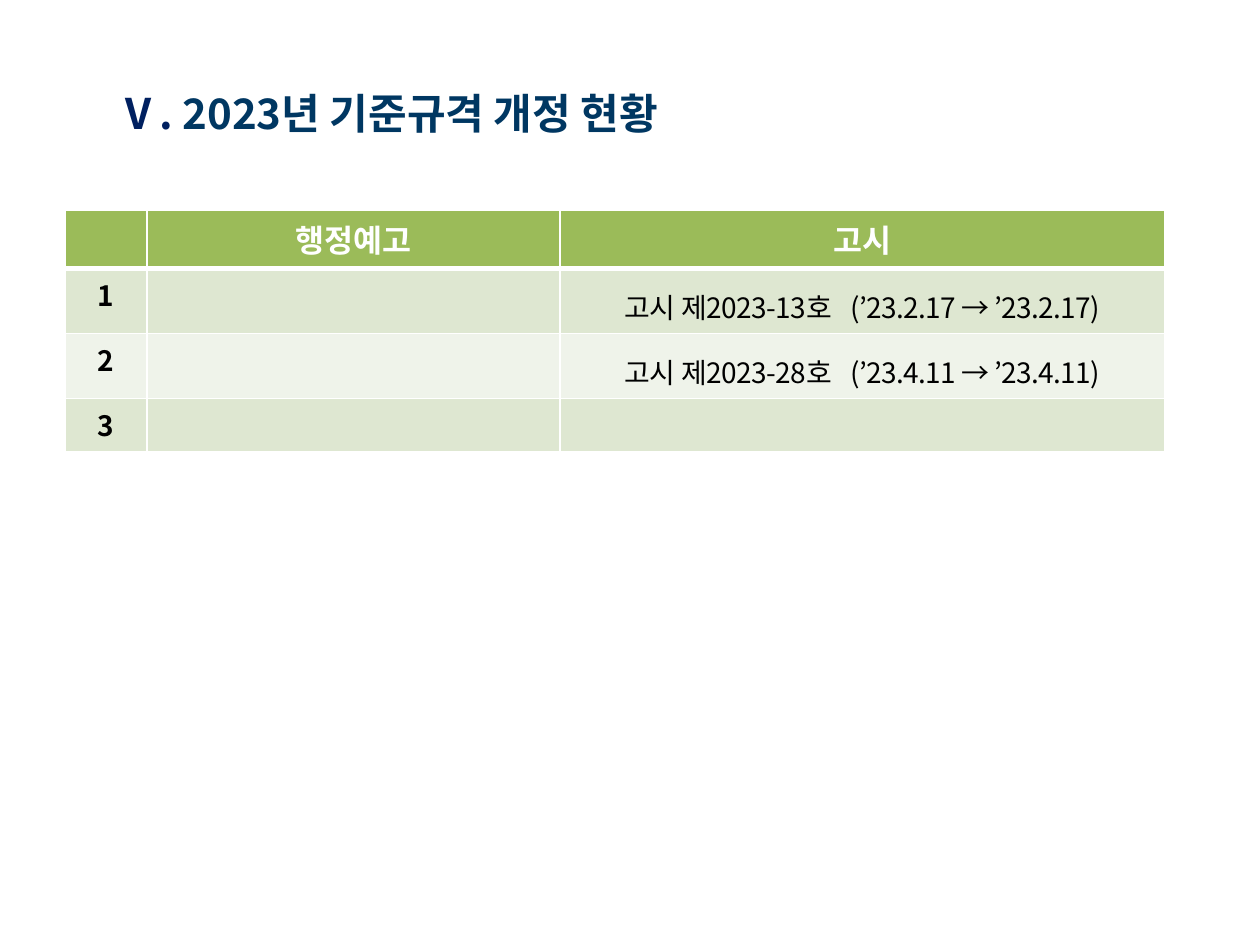
from lxml import etree
from pptx import Presentation
from pptx.dml.color import RGBColor
from pptx.enum.text import MSO_AUTO_SIZE, PP_ALIGN
from pptx.oxml.ns import qn
from pptx.util import Pt

PX = 914400 // 126
FONT = "Noto Sans CJK KR"
CENTER = PP_ALIGN.CENTER
FIT_SHAPE = MSO_AUTO_SIZE.SHAPE_TO_FIT_TEXT


def add_run(paragraph, text, size, color, bold=True, spacing=0):
    """Add a run; spacing is in hundredths of a point."""
    run = paragraph.add_run()
    run.text = text
    run.font.size = Pt(size)
    run.font.bold = bold
    run.font.name = FONT
    run.font.color.rgb = RGBColor.from_string(color)
    properties = run.font._element
    etree.SubElement(properties, qn("a:ea"), typeface=FONT)
    if spacing:
        properties.set("spc", str(spacing))


def add_border(cell, side, points, color):
    line = etree.SubElement(cell._tc.get_or_add_tcPr(), qn("a:ln" + side), w=str(Pt(points)))
    fill = etree.SubElement(line, qn("a:solidFill"))
    etree.SubElement(fill, qn("a:srgbClr"), val=color)


prs = Presentation()
prs.slide_width, prs.slide_height = 1260 * PX, 945 * PX
slide = prs.slides.add_slide(prs.slide_layouts[6])

# Revision table
column_widths = [82, 413, 605]
row_heights = [58, 53, 53, 53]
row_fills = ["9BBB59", "DEE7D1", "EFF3EA", "DEE7D1"]
revisions = slide.shapes.add_table(
    4, 3, 65 * PX, 210 * PX, sum(column_widths) * PX, sum(row_heights) * PX).table
for column, width in zip(revisions.columns, column_widths):
    column.width = width * PX
for r, (row, height, fill) in enumerate(zip(revisions.rows, row_heights, row_fills)):
    row.height = height * PX
    for cell in row.cells:
        for side in "LRTB":
            under_header = (r, side) in [(0, "B"), (1, "T")]
            add_border(cell, side, 3 if under_header else 1, "FFFFFF")
        cell.fill.solid()
        cell.fill.fore_color.rgb = RGBColor.from_string(fill)
        cell.text_frame.paragraphs[0].alignment = CENTER

for c, heading in enumerate(["행정예고", "고시"], start=1):
    add_run(revisions.cell(0, c).text_frame.paragraphs[0], heading, 18, "FFFFFF")
for number in range(1, 4):
    add_run(revisions.cell(number, 0).text_frame.paragraphs[0], str(number), 16, "000000")

notices = [("2023-13", "(’23.2.17 → ’23.2.17)"), ("2023-28", "(’23.4.11 → ’23.4.11)")]
for r, (notice_number, dates) in enumerate(notices, start=1):
    notice = revisions.cell(r, 2).text_frame.paragraphs[0]
    notice.line_spacing = 1.3
    indent = 21 * PX
    notice._p.get_or_add_pPr().set("marL", str(indent))
    notice._p.get_or_add_pPr().set("indent", str(-indent))
    # The widely spaced blank sets the dates apart from the notice number
    for text, spacing in [("고시 제", -20), (notice_number, -30), ("호", -20),
                          (" ", 700), (dates, -30)]:
        add_run(notice, text, 16, "000000", bold=False, spacing=spacing)

# Title
title_frame = slide.shapes.add_textbox(105 * PX, 81 * PX, 645 * PX, 62 * PX).text_frame
title_frame.word_wrap = True
title_frame.auto_size = FIT_SHAPE
title = title_frame.paragraphs[0]
add_run(title, "Ⅴ. ", 24, "002060")
add_run(title, "2023년 기준규격 개정 현황", 24, "003762")

prs.save("out.pptx")
